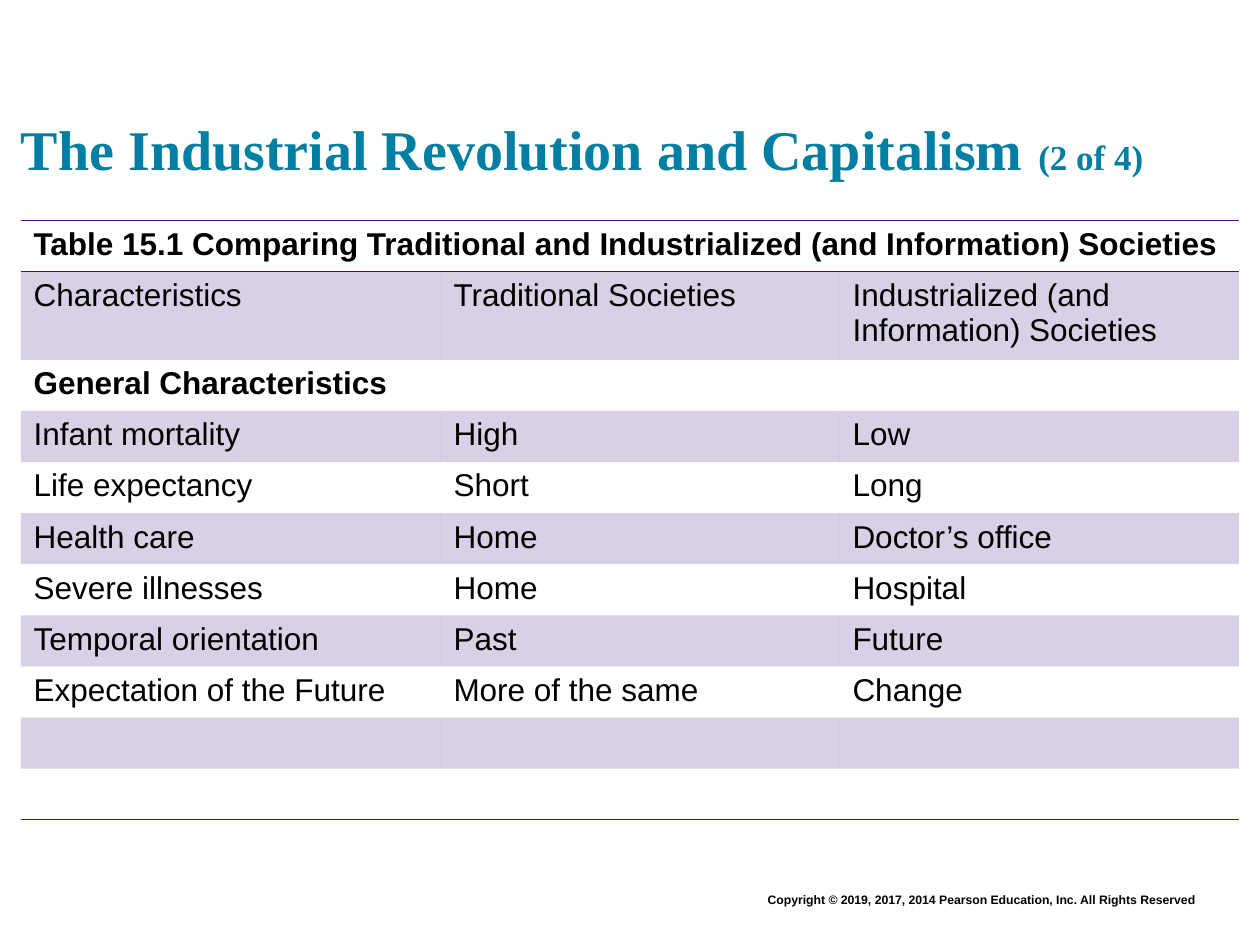
import pptx
import pptx.dml.color
import pptx.enum.text
import pptx.oxml
import pptx.oxml.ns
import pptx.util

BLACK = pptx.dml.color.RGBColor(0x00, 0x00, 0x00)
TEAL = pptx.dml.color.RGBColor(0x00, 0x7F, 0xA3)
PURPLE = pptx.dml.color.RGBColor(0x3C, 0x15, 0x81)

GRID_COLUMNS, GRID_ROWS = 60, 90
COLUMN_SPANS = (20, 19, 19)
ROW_SPAN = 4.87
PLAIN_TABLE_STYLE = "{2D5ABB26-0587-4C30-8999-92F81FD0307C}"
NAMESPACE = pptx.oxml.ns.nsdecls("a")

CAPTION = "Table 15.1 Comparing Traditional and Industrialized (and Information) Societies"
TABLE_ROWS = [
    (CAPTION, "", ""),
    ("Characteristics", "Traditional Societies", "Industrialized (and Information) Societies"),
    ("General Characteristics", "", ""),
    ("Infant mortality", "High", "Low"),
    ("Life expectancy", "Short", "Long"),
    ("Health care", "Home", "Doctor’s office"),
    ("Severe illnesses", "Home", "Hospital"),
    ("Temporal orientation", "Past", "Future"),
    ("Expectation of the Future", "More of the same", "Change"),
    ("", "", ""),
    ("", "", ""),
]
BOLD_ROWS = (0, 2)
BORDERS = {0: ("lnT", "lnB"), len(TABLE_ROWS) - 1: ("lnB",)}


class SlideBuilder:
    title_format = {"name": "Times New Roman", "size": pptx.util.Pt(32), "bold": True}
    body_format = {"name": "Arial", "size": pptx.util.Pt(18), "bold": False}

    def __init__(self, presentation):
        self.presentation = presentation
        self.slide = presentation.slides.add_slide(presentation.slide_layouts[6])

    def across(self, columns):
        return round(self.presentation.slide_width * columns / GRID_COLUMNS)

    def down(self, rows):
        return round(self.presentation.slide_height * rows / GRID_ROWS)

    def box(self, left, top, width, height):
        return self.across(left), self.down(top), self.across(width), self.down(height)

    def styled_run(self, paragraph, text, color, values):
        run = paragraph.add_run()
        run.text = text
        run.font.color.rgb = color
        for name, value in values.items():
            setattr(run.font, name, value)

    def text(self, place, runs, color, frame_values, alignment):
        frame = self.slide.shapes.add_textbox(*self.box(*place)).text_frame
        for name, value in {"word_wrap": True, **frame_values}.items():
            setattr(frame, name, value)
        paragraph = frame.paragraphs[0]
        paragraph.alignment = alignment
        for text, values in runs:
            self.styled_run(paragraph, text, color, values)

    def table(self, left, top, rows):
        place = self.box(left, top, sum(COLUMN_SPANS), ROW_SPAN * len(rows))
        table = self.slide.shapes.add_table(len(rows), len(COLUMN_SPANS), *place).table
        table.first_row = table.horz_banding = False
        table._tbl.tblPr.find(pptx.oxml.ns.qn("a:tableStyleId")).text = PLAIN_TABLE_STYLE
        for column, span in zip(table.columns, COLUMN_SPANS):
            column.width = self.across(span)
        for row_index, texts in enumerate(rows):
            table.rows[row_index].height = self.down(ROW_SPAN)
            for column_index, text in enumerate(texts):
                cell = table.cell(row_index, column_index)
                self.shade(cell, row_index % 2 == 1)
                self.border(cell, BORDERS.get(row_index, ()))
                if text:
                    values = {**self.body_format, "bold": row_index in BOLD_ROWS}
                    self.styled_run(cell.text_frame.paragraphs[0], text, BLACK, values)
        table.cell(0, 0).merge(table.cell(0, len(COLUMN_SPANS) - 1))

    def shade(self, cell, shaded):
        if not shaded:
            cell.fill.background()
            return
        cell.fill.solid()
        cell.fill.fore_color.rgb = PURPLE
        color = cell._tc.tcPr.find(".//" + pptx.oxml.ns.qn("a:srgbClr"))
        color.append(pptx.oxml.parse_xml(f'<a:alpha {NAMESPACE} val="20000"/>'))

    def border(self, cell, sides):
        for index, side in enumerate(sides):
            line = pptx.oxml.parse_xml(
                f'<a:{side} {NAMESPACE} w="{pptx.util.Pt(1)}"><a:solidFill>'
                f'<a:srgbClr val="{PURPLE}"/></a:solidFill></a:{side}>'
            )
            cell._tc.tcPr.insert(index, line)


def main():
    presentation = pptx.Presentation()
    presentation.slide_width = pptx.util.Inches(10)
    presentation.slide_height = pptx.util.Inches(7.5)
    builder = SlideBuilder(presentation)

    builder.text(
        (10.5, 84.36, 47, 2.64),
        [("Copyright © 2019, 2017, 2014 Pearson Education, Inc. All Rights Reserved",
          {**builder.body_format, "size": pptx.util.Pt(7), "bold": True})],
        BLACK,
        {},
        pptx.enum.text.PP_ALIGN.RIGHT,
    )
    margins = dict.fromkeys(("margin_left", "margin_top", "margin_right", "margin_bottom"), 0)
    builder.text(
        (1, 2.88, 58, 14.4),
        [("The Industrial Revolution and Capitalism ", builder.title_format),
         ("(2 of 4)", {**builder.title_format, "size": pptx.util.Pt(20)})],
        TEAL,
        {"vertical_anchor": pptx.enum.text.MSO_ANCHOR.BOTTOM, **margins},
        pptx.enum.text.PP_ALIGN.LEFT,
    )
    builder.table(1, 21, TABLE_ROWS)
    presentation.save("out.pptx")


if __name__ == "__main__":
    main()
